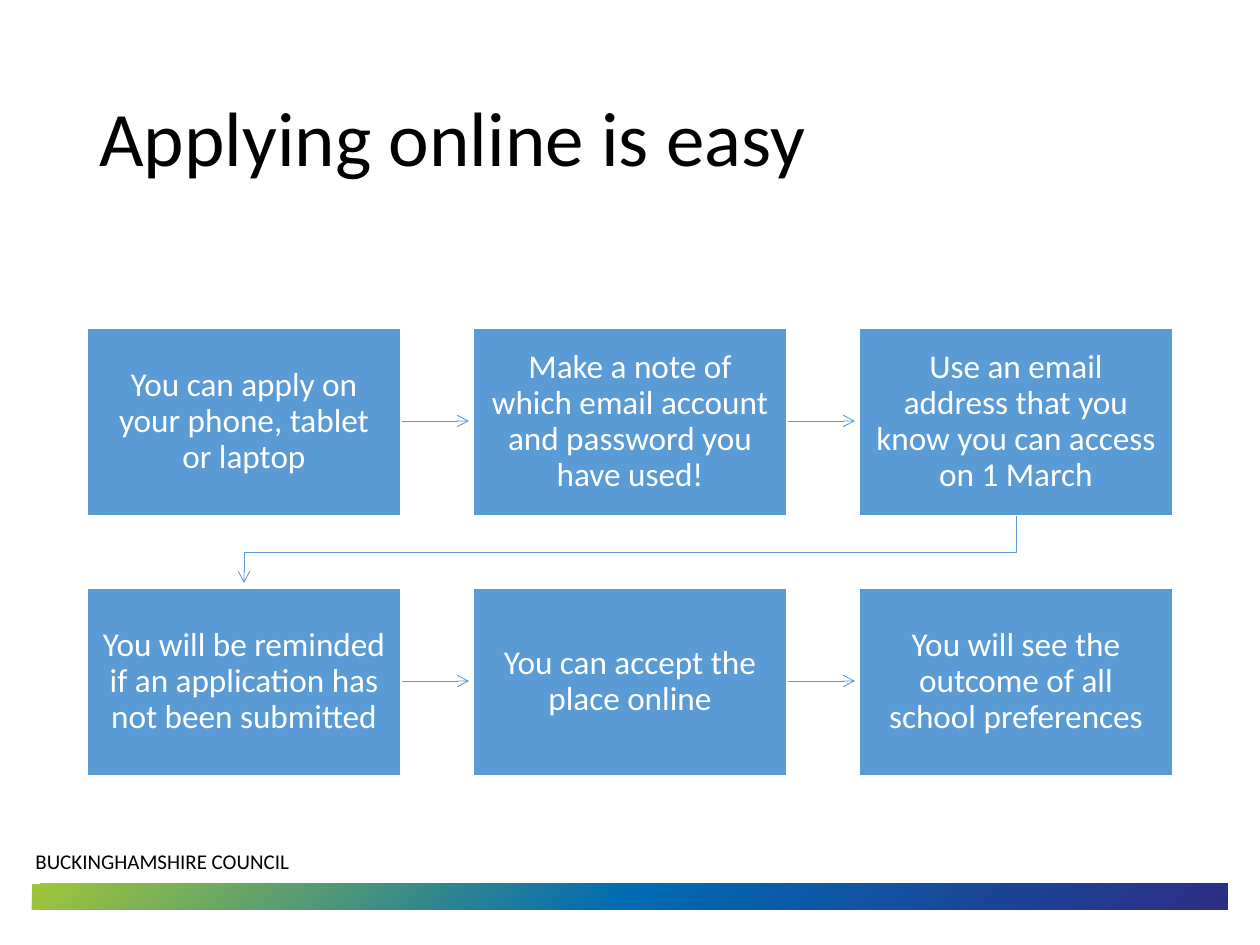
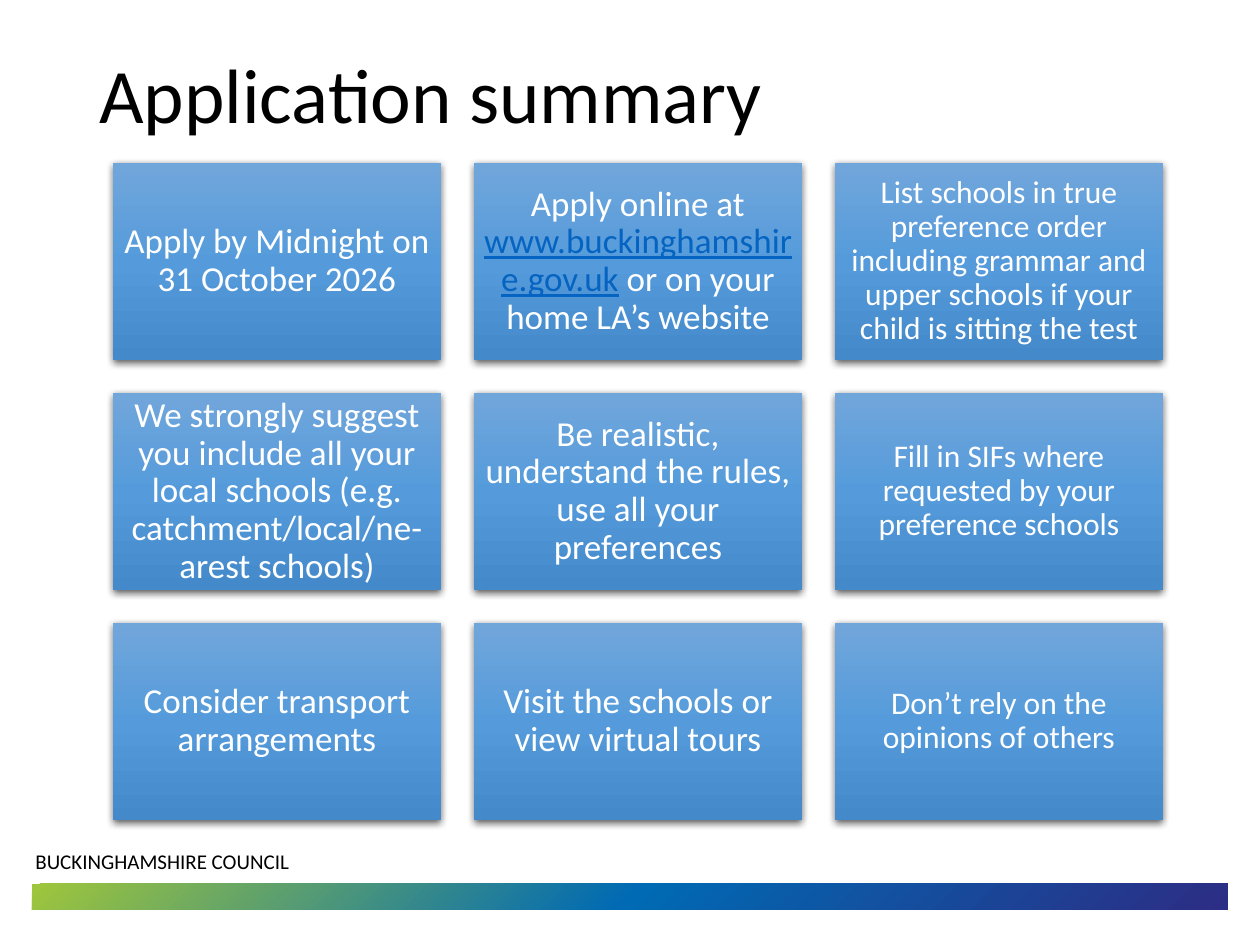
"""Build two school application slides: a process flow and a summary grid."""
import dataclasses
import typing

import pptx
import pptx.dml.color
import pptx.enum.shapes
import pptx.enum.text
import pptx.oxml
import pptx.oxml.ns
import pptx.util

PX = 914400 / 126
FONT = "Calibri"
BLACK, WHITE, BLUE, LINK_BLUE = "000000", "FFFFFF", "5B9BD5", "0563C1"
BAND_COLORS = ("2C2D84", "006AB4", "9FC63B")
CARD_COLORS = ("71A6DB", "559BDB", "448ACA")
DOWNWARD = '<a:lin ang="5400000" scaled="0"/>'
CORNER = '<a:path path="circle"><a:fillToRect l="100000" t="100000"/></a:path>'
MIDDLE = pptx.enum.text.MSO_ANCHOR.MIDDLE
CENTER = pptx.enum.text.PP_ALIGN.CENTER
RECTANGLE = pptx.enum.shapes.MSO_SHAPE.RECTANGLE


@dataclasses.dataclass(frozen=True)
class Run:
    text: str
    color: str = WHITE
    underline: bool = False


@dataclasses.dataclass(frozen=True)
class Grid:
    left: int
    top: int
    width: int
    height: int
    column_pitch: int
    row_pitch: int
    columns: int = 3

    def cell(self, index: int) -> tuple[int, int, int, int]:
        row, column = divmod(index, self.columns)
        return (self.left + column * self.column_pitch,
                self.top + row * self.row_pitch, self.width, self.height)


STEP_GRID = Grid(87, 328, 314, 188, 386, 260)
CARD_GRID = Grid(113, 163, 328, 197, 361, 230)
ARROW_LENGTH = 68

STEPS = (
    "You can apply on your phone, tablet or laptop",
    "Make a note of which email account and password you have used!",
    "Use an email address that you know you can access on 1 March",
    "You will be reminded if an application has not been submitted",
    "You can accept the place online",
    "You will see the outcome of all school preferences",
)
CARDS = (
    (Run("Apply by Midnight on 31 October 2026"),),
    (Run("Apply online at "),
     Run("www.buckinghamshire.gov.uk", LINK_BLUE, True),
     Run(" or on your home LA’s website")),
    (Run("List schools in true preference order including grammar and upper "
         "schools if your child is sitting the test"),),
    (Run("We strongly suggest you include all your local schools "
         "(e.g. catchment/local/ne-arest schools)"),),
    (Run("Be realistic, understand the rules, use all your preferences"),),
    (Run("Fill in SIFs where requested by your preference schools"),),
    (Run("Consider transport arrangements"),),
    (Run("Visit the schools or view virtual tours"),),
    (Run("Don’t rely on the opinions of others"),),
)


def px(*lengths: int) -> list[pptx.util.Emu]:
    return [pptx.util.Emu(round(length * PX)) for length in lengths]


def rgb(color: str) -> pptx.dml.color.RGBColor:
    return pptx.dml.color.RGBColor.from_string(color)


def xml(markup: str) -> typing.Any:
    tag_end = min(markup.index(mark) for mark in " />" if mark in markup)
    namespace = pptx.oxml.ns.nsdecls("a")
    return pptx.oxml.parse_xml(f"{markup[:tag_end]} {namespace}{markup[tag_end:]}")


def write_text(frame: typing.Any, text: str | tuple[Run, ...], *, size: int,
               color: str = WHITE, align: typing.Any = None, anchor: typing.Any = None,
               line_spacing: float | None = None,
               insets: tuple[int, int] | None = None) -> None:
    frame.word_wrap = True
    if anchor is not None:
        frame.vertical_anchor = anchor
    if insets:
        horizontal, vertical = px(*insets)
        frame.margin_left = frame.margin_right = horizontal
        frame.margin_top = frame.margin_bottom = vertical
    paragraph = frame.paragraphs[0]
    paragraph.alignment = align
    paragraph.line_spacing = line_spacing
    for part in (Run(text, color),) if isinstance(text, str) else text:
        run = paragraph.add_run()
        run.text = part.text
        run.font.name = FONT
        run.font.size = pptx.util.Pt(size)
        run.font.color.rgb = rgb(part.color)
        if part.underline:
            run.font.underline = True


def fill_gradient(shape: typing.Any, colors: tuple[str, ...], direction: str) -> None:
    shape.fill.gradient()
    gradient = shape._element.spPr.find(pptx.oxml.ns.qn("a:gradFill"))
    for child in list(gradient):
        gradient.remove(child)
    stops = "".join(
        f'<a:gs pos="{100000 * index // (len(colors) - 1)}"><a:srgbClr val="{color}"/></a:gs>'
        for index, color in enumerate(colors))
    gradient.append(xml(f"<a:gsLst>{stops}</a:gsLst>"))
    gradient.append(xml(direction))


def add_rectangle(slide: typing.Any, bounds: tuple[int, int, int, int]) -> typing.Any:
    shape = slide.shapes.add_shape(RECTANGLE, *px(*bounds))
    shape.shadow.inherit = False
    shape.line.fill.background()
    return shape


def add_base_slide(presentation: typing.Any, title: str, title_height: int) -> typing.Any:
    slide = presentation.slides.add_slide(presentation.slide_layouts[6])
    band = add_rectangle(slide, (32, 884, 1196, 26))
    fill_gradient(band, BAND_COLORS, CORNER)
    band._element.spPr.xfrm.set("flipH", "1")
    footer = slide.shapes.add_textbox(*px(23, 842, 606, 38))
    write_text(footer.text_frame, "BUCKINGHAMSHIRE COUNCIL", size=12, color=BLACK)
    heading = slide.shapes.add_textbox(*px(87, 50, 1086, title_height))
    write_text(heading.text_frame, title, size=44, color=BLACK,
               anchor=MIDDLE, line_spacing=0.9)
    return slide


def style_arrow(arrow: typing.Any) -> None:
    arrow.line.color.rgb = rgb(BLUE)
    arrow.line.width = pptx.util.Pt(0.5)
    arrow.line._get_or_add_ln().append(xml('<a:tailEnd type="arrow"/>'))


def add_straight_arrow(slide: typing.Any, left: int, y: int) -> None:
    arrow = slide.shapes.add_connector(pptx.enum.shapes.MSO_CONNECTOR.STRAIGHT,
                                       *px(left, y, left + ARROW_LENGTH, y))
    style_arrow(arrow)
    arrow._element.spPr.append(xml("<a:effectLst/>"))


def add_return_arrow(slide: typing.Any, points: list[tuple[int, int]]) -> None:
    builder = slide.shapes.build_freeform(*points[0], scale=PX)
    builder.add_line_segments(points[1:], close=False)
    arrow = builder.convert_to_shape()
    arrow.shadow.inherit = False
    arrow.fill.background()
    style_arrow(arrow)


def add_step(slide: typing.Any, index: int, text: str) -> None:
    bounds = STEP_GRID.cell(index)
    left, top, width, height = bounds
    if (index + 1) % STEP_GRID.columns:
        add_straight_arrow(slide, left + width, top + height // 2 - 1)
    step = add_rectangle(slide, bounds)
    step.fill.solid()
    step.fill.fore_color.rgb = rgb(BLUE)
    step.line.color.rgb = rgb(WHITE)
    step.line.width = pptx.util.Pt(1.5)
    write_text(step.text_frame, text, size=19, align=CENTER, anchor=MIDDLE,
               line_spacing=0.9, insets=(15, 16))


def add_card(slide: typing.Any, index: int, runs: tuple[Run, ...]) -> None:
    card = add_rectangle(slide, CARD_GRID.cell(index))
    fill_gradient(card, CARD_COLORS, DOWNWARD)
    effects = card._element.spPr.find(pptx.oxml.ns.qn("a:effectLst"))
    effects.append(xml(
        '<a:outerShdw blurRad="57150" dist="19050" dir="5400000" algn="ctr" rotWithShape="0">'
        f'<a:srgbClr val="{BLACK}"><a:alpha val="63000"/></a:srgbClr></a:outerShdw>'))
    in_last_column = index % CARD_GRID.columns == CARD_GRID.columns - 1
    size, inset = (18, 9) if in_last_column else (20, 10)
    write_text(card.text_frame, runs, size=size, align=CENTER, anchor=MIDDLE,
               line_spacing=0.9, insets=(inset, inset))


def main() -> None:
    presentation = pptx.Presentation()
    presentation.slide_width, presentation.slide_height = px(1260, 945)

    process = add_base_slide(presentation, "Applying online is easy", 183)
    for index, text in enumerate(STEPS):
        add_step(process, index, text)
    add_return_arrow(process, [(1016, 516), (1016, 552), (244, 552), (244, 583)])

    summary = add_base_slide(presentation, "Application summary", 97)
    for index, runs in enumerate(CARDS):
        add_card(summary, index, runs)

    presentation.save("out.pptx")


if __name__ == "__main__":
    main()
